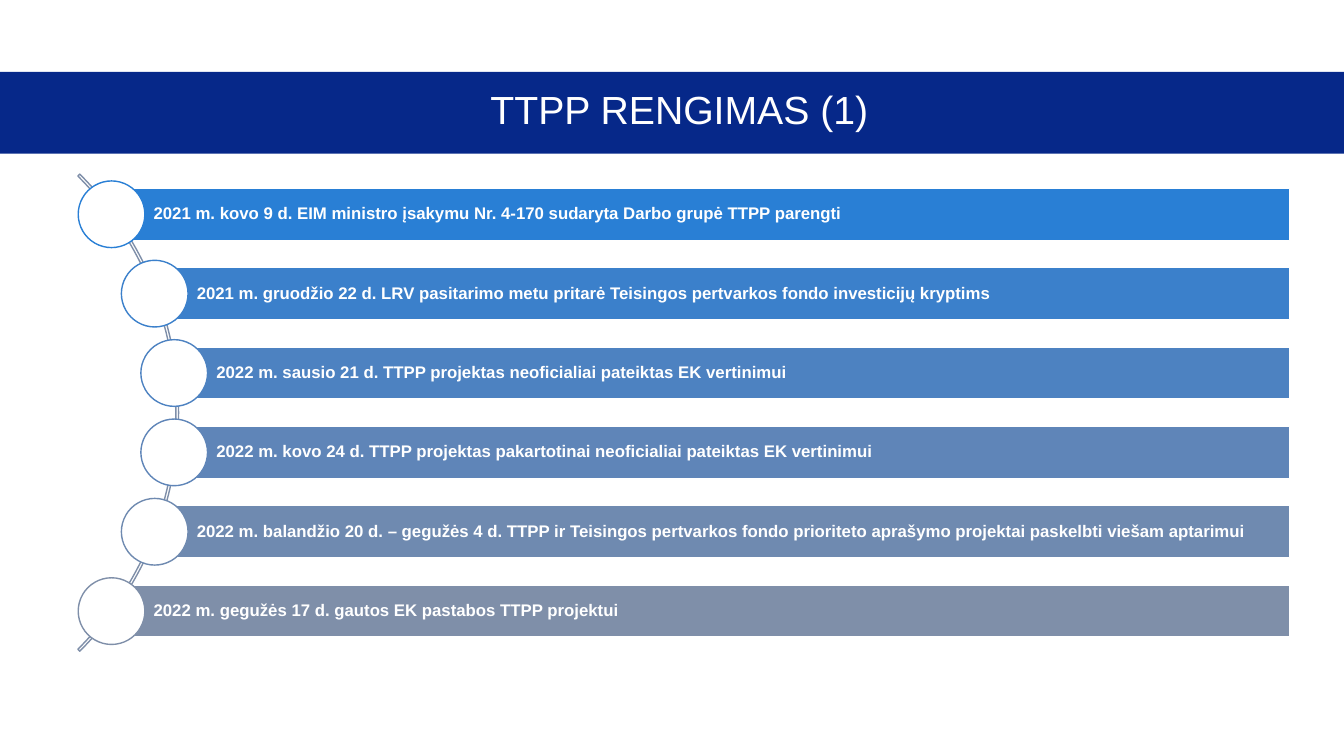
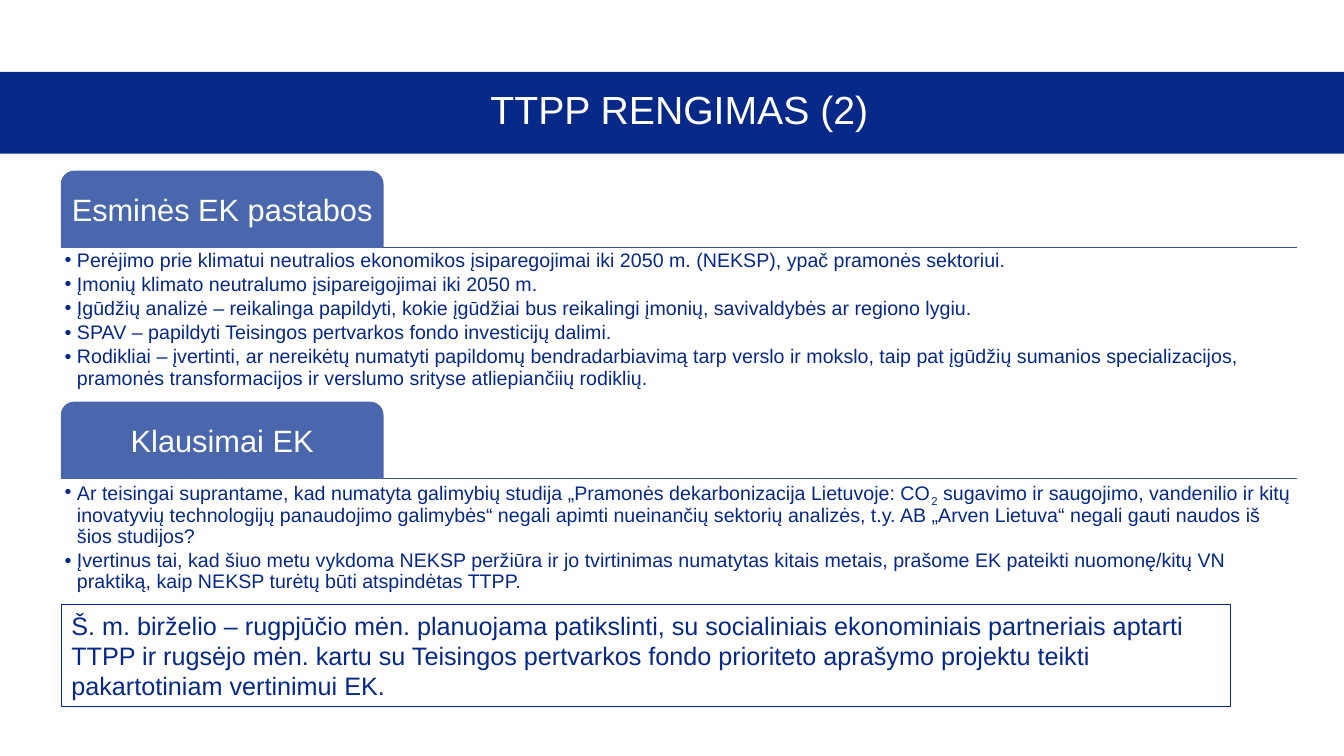
from dataclasses import dataclass
from math import sqrt

from lxml import etree
from pptx import Presentation
from pptx.dml.color import RGBColor
from pptx.enum import shapes as sh, text as tx
from pptx.oxml.ns import qn
from pptx.util import Cm, Pt

# Shared style
FONT = "Arial"
NAVY = RGBColor(0x06, 0x28, 0x89)
WHITE = RGBColor(0xFF, 0xFF, 0xFF)
TAB = RGBColor(0x4A, 0x66, 0xAC)
RULE = RGBColor(0x3B, 0x52, 0x8A)
GREY = RGBColor(0x7F, 0x8F, 0xA9)
WIDE, HIGH = 33.87, 19.05
LEFT, SPAN = 1.55, 31.14


@dataclass
class Box:
    x: float
    y: float
    w: float
    h: float

    def cm(self) -> tuple:
        return Cm(self.x), Cm(self.y), Cm(self.w), Cm(self.h)


@dataclass
class Step:
    label: str
    tint: RGBColor


@dataclass
class Part:
    head: str
    items: list  # each item is a list of runs; "_" opens a subscript run


STEPS = [
    Step("2021 m. kovo 9 d. EIM ministro įsakymu Nr. 4-170 sudaryta Darbo grupė TTPP parengti",
         RGBColor(0x29, 0x7F, 0xD5)),
    Step("2021 m. gruodžio 22 d. LRV pasitarimo metu pritarė Teisingos pertvarkos fondo "
         "investicijų kryptims", RGBColor(0x3B, 0x80, 0xCB)),
    Step("2022 m. sausio 21 d. TTPP projektas neoficialiai pateiktas EK vertinimui",
         RGBColor(0x4D, 0x82, 0xC1)),
    Step("2022 m. kovo 24 d. TTPP projektas pakartotinai neoficialiai pateiktas EK vertinimui",
         RGBColor(0x5F, 0x85, 0xB8)),
    Step("2022 m. balandžio 20 d. – gegužės 4 d. TTPP ir Teisingos pertvarkos fondo prioriteto "
         "aprašymo projektai paskelbti viešam aptarimui", RGBColor(0x6F, 0x8A, 0xB0)),
    Step("2022 m. gegužės 17 d. gautos EK pastabos TTPP projektui", GREY),
]

PARTS = [
    Part("Esminės EK pastabos", [
        ["Perėjimo prie klimatui neutralios ekonomikos įsiparegojimai iki 2050 m. (NEKSP), "
         "ypač pramonės sektoriui."],
        ["Įmonių klimato neutralumo įsipareigojimai iki 2050 m."],
        ["Įgūdžių analizė – reikalinga papildyti, kokie įgūdžiai bus reikalingi įmonių, "
         "savivaldybės ar regiono lygiu."],
        ["SPAV – papildyti Teisingos pertvarkos fondo investicijų dalimi."],
        ["Rodikliai – įvertinti, ar nereikėtų numatyti papildomų bendradarbiavimą tarp verslo ir "
         "mokslo, taip pat įgūdžių sumanios specializacijos, pramonės transformacijos ir "
         "verslumo srityse atliepiančiių rodiklių."],
    ]),
    Part("Klausimai EK", [
        ["Ar teisingai suprantame, kad numatyta galimybių studija „Pramonės dekarbonizacija "
         "Lietuvoje: CO", "_2",
         " sugavimo ir saugojimo, vandenilio ir kitų inovatyvių technologijų panaudojimo "
         "galimybės“ negali apimti nueinančių sektorių analizės, t.y. AB „Arven Lietuva“ "
         "negali gauti naudos iš šios studijos?"],
        ["Įvertinus tai, kad šiuo metu vykdoma NEKSP peržiūra ir jo tvirtinimas numatytas kitais "
         "metais, prašome EK pateikti nuomonę/kitų VN praktiką, kaip NEKSP turėtų būti "
         "atspindėtas TTPP."],
    ]),
]

PLAN = ("Š. m. birželio – rugpjūčio mėn. planuojama patikslinti, su socialiniais ekonominiais "
        "partneriais aptarti TTPP ir rugsėjo mėn. kartu su Teisingos pertvarkos fondo prioriteto "
        "aprašymo projektu teikti pakartotiniam vertinimui EK.")


def add_run(para, words: str, size: float, tone: RGBColor, bold: bool = False) -> None:
    run = para.add_run()
    run.text = words.removeprefix("_")
    font = run.font
    font.name, font.size, font.bold = FONT, Pt(size), bold
    font.color.rgb = tone
    if words.startswith("_"):
        run._r.get_or_add_rPr().set("baseline", "-25000")


def set_frame(frame, pads: tuple, anchor=tx.MSO_ANCHOR.MIDDLE) -> None:
    frame.word_wrap = True
    frame.auto_size = tx.MSO_AUTO_SIZE.NONE
    frame.vertical_anchor = anchor
    (frame.margin_left, frame.margin_top,
     frame.margin_right, frame.margin_bottom) = map(Cm, pads)


def write(frame, words: str, size: float, tone: RGBColor, align=tx.PP_ALIGN.CENTER,
          bold: bool = False, lead: float = 0.9) -> None:
    para = frame.paragraphs[0]
    para.alignment, para.line_spacing = align, lead
    add_run(para, words, size, tone, bold)


def add_box(slide, kind, box: Box, fill=None, line=None, thick: float = 1):
    shape = slide.shapes.add_shape(kind, *box.cm())
    shape.shadow.inherit = False
    if fill is None:
        shape.fill.background()
    else:
        shape.fill.solid()
        shape.fill.fore_color.rgb = fill
    if line is None:
        shape.line.fill.background()
    else:
        shape.line.color.rgb = line
        shape.line.width = Pt(thick)
    return shape


def add_rule(slide, y: float) -> None:
    wire = slide.shapes.add_connector(
        sh.MSO_CONNECTOR.STRAIGHT, Cm(LEFT), Cm(y), Cm(LEFT + SPAN), Cm(y))
    wire.line.color.rgb = RULE
    wire.line.width = Pt(1)
    etree.SubElement(wire.element.spPr, qn("a:effectLst"))


def place(holder, box: Box) -> None:
    holder.left, holder.top, holder.width, holder.height = box.cm()


def new_slide(deck, layout: int, name: str):
    slide = deck.slides.add_slide(deck.slide_layouts[layout])
    # Title band, sent behind the title
    band = add_box(slide, sh.MSO_SHAPE.RECTANGLE, Box(0, 1.81, WIDE, 2.06), NAVY)
    band.element.getparent().insert(2, band.element)
    title = slide.shapes.title
    place(title, Box(LEFT, 1.78, SPAN, 2.06))
    set_frame(title.text_frame, (0.25, 0.13, 0.25, 0.13))
    write(title.text_frame, name, 28, WHITE)
    return slide


def fill_list(holder, box: Box, items: list) -> None:
    place(holder, box)
    frame = holder.text_frame
    set_frame(frame, (0.08,) * 4, tx.MSO_ANCHOR.TOP)
    for i, runs in enumerate(items):
        para = frame.add_paragraph() if i else frame.paragraphs[0]
        props = para._p.get_or_add_pPr()
        props.set("marL", str(Cm(0.31)))
        props.set("indent", str(-Cm(0.31)))
        etree.SubElement(props, qn("a:buChar")).set("char", "•")
        para.line_spacing = 0.9
        para.space_before, para.space_after = Pt(0), Pt(2.1)
        for words in runs:
            add_run(para, words, 14, NAVY)


def draw_steps(deck) -> None:
    slide = new_slide(deck, 5, "TTPP RENGIMAS (1)")
    hub_x, hub_y, rad = -4, 10.4, 8.5
    pitch, bar_h, dot, right = 2, 1.31, 1.68, 32.5

    # Arc on which the circles sit
    arc = add_box(slide, sh.MSO_SHAPE.BLOCK_ARC,
                  Box(hub_x - rad, hub_y - rad, 2 * rad, 2 * rad), line=GREY)
    for i, value in enumerate((189, 27, 0.004)):
        arc.adjustments[i] = value

    # Bars and circles
    for i, step in enumerate(STEPS):
        drop = (i - (len(STEPS) - 1) / 2) * pitch
        x, y = hub_x + sqrt((rad - 0.05) ** 2 - drop ** 2), hub_y + drop
        bar = add_box(slide, sh.MSO_SHAPE.RECTANGLE,
                      Box(x, y - bar_h / 2, right - x, bar_h), step.tint, WHITE)
        set_frame(bar.text_frame, (1.06, 0.08, 0.08, 0.08))
        write(bar.text_frame, step.label, 12, WHITE, tx.PP_ALIGN.LEFT, True)
        add_box(slide, sh.MSO_SHAPE.OVAL,
                Box(x - dot / 2, y - dot / 2, dot, dot), WHITE, step.tint)


def draw_notes(deck) -> None:
    slide = new_slide(deck, 3, "TTPP RENGIMAS (2)")
    top, pitch, tab_h = 4.32, 5.82, 1.91

    # Tabs with a rule and a list below each
    for i, part in enumerate(PARTS):
        y = top + i * pitch
        add_rule(slide, y + tab_h)
        tab = add_box(slide, sh.MSO_SHAPE.ROUND_2_SAME_RECTANGLE,
                      Box(LEFT, y, 8.1, tab_h), TAB, TAB)
        set_frame(tab.text_frame, (0.12,) * 4)
        write(tab.text_frame, part.head, 22, WHITE)
        fill_list(slide.placeholders[i + 1], Box(LEFT, y + tab_h, SPAN, 3.8), part.items)

    # Plan for the next months
    plan = add_box(slide, sh.MSO_SHAPE.RECTANGLE, Box(LEFT, 15.24, 29.46, 2.57),
                   line=NAVY, thick=0.75)
    set_frame(plan.text_frame, (0.25, 0.13, 0.25, 0.13), tx.MSO_ANCHOR.TOP)
    write(plan.text_frame, PLAN, 18, NAVY, tx.PP_ALIGN.LEFT, lead=1.0)


def main() -> None:
    deck = Presentation()
    deck.slide_width, deck.slide_height = Cm(WIDE), Cm(HIGH)
    draw_steps(deck)
    draw_notes(deck)
    deck.save("out.pptx")


if __name__ == "__main__":
    main()
